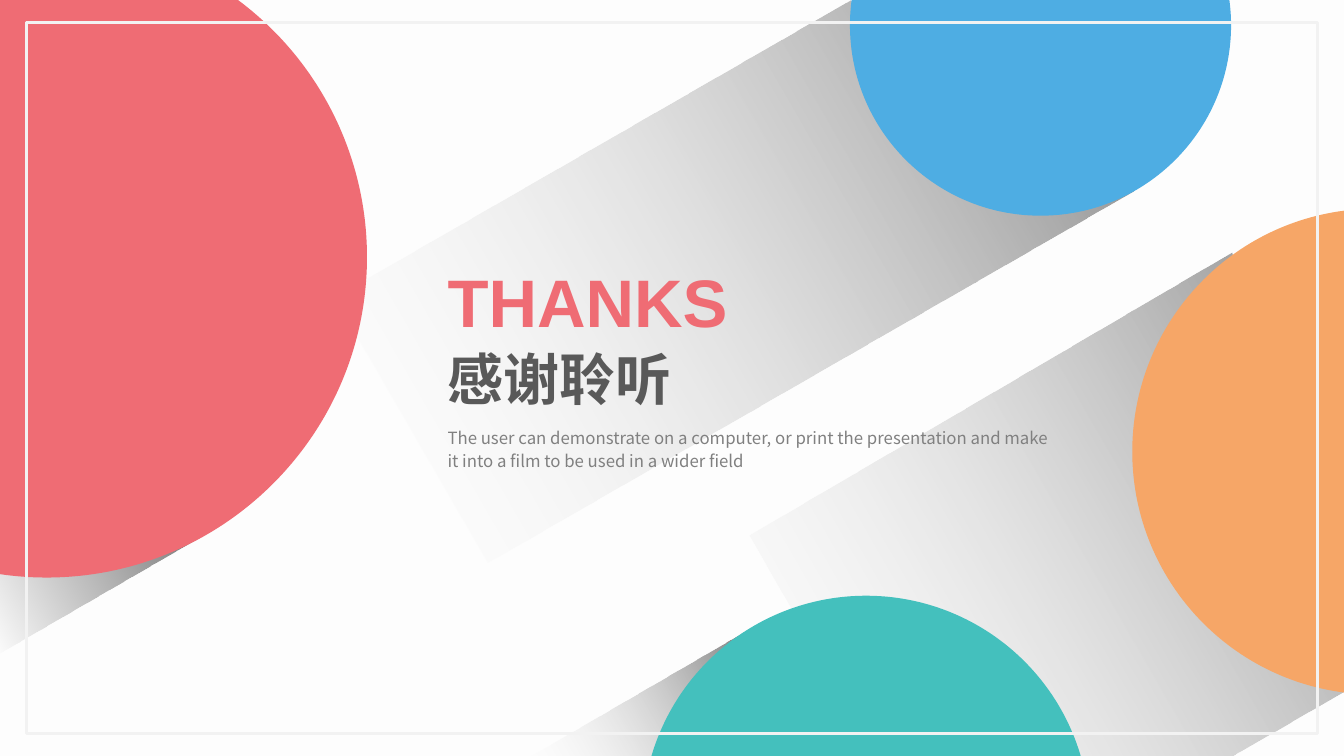
from dataclasses import dataclass
from math import ceil, cos, floor, radians, sin, tan

from lxml.etree import SubElement
from pptx import Presentation
from pptx.dml.color import RGBColor as Rgb
from pptx.enum.shapes import MSO_SHAPE as Kind
from pptx.enum.text import MSO_AUTO_SIZE as Fit
from pptx.oxml.ns import qn
from pptx.util import Emu, Pt

PX = 9144  # one hundredth of an inch
WIDE, HIGH = 1333, 750
TILT = 30


@dataclass(frozen=True)
class Theme:
    page: str = "FDFDFD"
    frame: str = "F2F2F2"
    red: str = "EF6C74"
    teal: str = "44C0BD"
    orange: str = "F6A667"
    blue: str = "4EADE3"
    dark: str = "595959"
    grey: str = "808080"
    black: str = "000000"
    white: str = "FFFFFF"
    head: str = "Arial"
    body: str = "Noto Sans CJK SC"
    big: int = 48
    mid: int = 40
    small: int = 12
    line: float = 2.25


LOOK = Theme()

# corners, opacity of the dark end, colour of the clear end
SHADES = [
    ([(749, 621), (646, 749), (636, 754), (518, 754)], 60, LOOK.white),
    ([(1333, 686), (1222, 251), (743, 531), (957, 903)], 50, LOOK.white),
    ([(1124, 190), (843, 1), (332, 295), (484, 558)], 50, LOOK.white),
    ([(-3, 503), (199, 533), (-4, 650), (-4, 504)], 55, LOOK.black),
]

# centre, radius, first and last angle, extra corners, colour
DISCS = [
    ((46, 255), 318, -53.3, 98.3, [(0, 0)], LOOK.red),
    ((859, 813), 222, 196.5, 343.5, [], LOOK.teal),
    ((1364, 448), 241, 97.4, 262.6, [], LOOK.orange),
    ((1032, 25), 189, -7.6, 187.6, [], LOOK.blue),
]


def px(*sizes):
    return [Emu(round(size * PX)) for size in sizes]


def tint(fill, color):
    fill.solid()
    fill.fore_color.rgb = Rgb.from_string(color)


def turn(spot, angle):
    """Rotate a point clockwise about the page corner."""
    x, y = spot
    c, s = cos(radians(angle)), sin(radians(angle))
    return x * c - y * s, x * s + y * c


def outline(slide, spots):
    spots = [px(*spot) for spot in spots]
    pen = slide.shapes.build_freeform(*spots[0], scale=1.0)
    pen.add_line_segments(spots[1:], close=True)
    shape = pen.convert_to_shape()
    shape.shadow.inherit = False
    shape.line.fill.background()
    return shape


def shade(slide, spots, alpha, clear):
    """Draw a tilted shadow that fades out towards its left end."""
    level = [turn(spot, TILT) for spot in spots]
    shape = outline(slide, level)
    xs, ys = zip(*level)
    x, y = turn(((min(xs) + max(xs)) / 2, (min(ys) + max(ys)) / 2), -TILT)
    left, top = px(x, y)
    shape.left = left - shape.width // 2
    shape.top = top - shape.height // 2
    shape.rotation = 360 - TILT
    fill = shape.fill
    fill.gradient()
    fill.gradient_angle = 180
    ends = [(0, LOOK.black), (1, clear)]
    for stop, (place, color) in zip(fill.gradient_stops, ends):
        stop.position = place
        stop.color.rgb = Rgb.from_string(color)
    grad = shape.element.spPr.find(qn("a:gradFill"))
    for node, part in zip(grad.iter(qn("a:srgbClr")), (alpha, 0)):
        SubElement(node, qn("a:alpha"), val=str(part * 1000))


def arc(centre, radius, first, last):
    """Return the start of an arc, then three curve points per quadrant."""
    def spot(angle, pull=0):
        c, s = cos(radians(angle)), sin(radians(angle))
        return (centre[0] + radius * (c - pull * s),
                centre[1] + radius * (s + pull * c))

    quads = range(floor(first / 90) + 1, ceil(last / 90))
    cuts = [first, *(90 * quad for quad in quads), last]
    spots = [spot(first)]
    for start, end in zip(cuts, cuts[1:]):
        pull = 4 / 3 * tan(radians(end - start) / 4)
        spots += [spot(start, pull), spot(end, -pull), spot(end)]
    return spots


def bend(shape, count):
    """Turn the first lines of an outline, by threes, into curves."""
    track = next(shape.element.iter(qn("a:path")))
    lines = track.findall(qn("a:lnTo"))[:count]
    for at in range(0, count, 3):
        curve = SubElement(track, qn("a:cubicBezTo"))
        lines[at].addprevious(curve)
        for line in lines[at:at + 3]:
            curve.append(line[0])
            track.remove(line)


def disc(slide, centre, radius, first, last, extra, color):
    """Draw the part of a circle that lies on the page."""
    spots = arc(centre, radius, first, last)
    shape = outline(slide, spots + extra)
    bend(shape, len(spots) - 1)
    tint(shape.fill, color)


def label(slide, box, text, wrap, style, color, gap=None):
    frame = slide.shapes.add_textbox(*px(*box)).text_frame
    frame.word_wrap = wrap
    frame.auto_size = Fit.SHAPE_TO_FIT_TEXT
    para = frame.paragraphs[0]
    if gap:
        para.line_spacing = gap
    run = para.add_run()
    run.text = text
    for name, value in style.items():
        setattr(run.font, name, value)
    run.font.color.rgb = Rgb.from_string(color)


def words(slide, box):
    left, top, wide = box
    title = {"name": LOOK.head, "size": Pt(LOOK.big), "bold": True}
    thanks = {**title, "size": Pt(LOOK.mid)}
    note = {"name": LOOK.body, "size": Pt(LOOK.small)}
    label(slide, (left, top + 84, 245, 77), "感谢聆听", False, thanks, LOOK.dark)
    label(slide, (left, top + 164, wide, 56),
          "The user can demonstrate on a computer, or print the presentation "
          "and make it into a film to be used in a wider field",
          True, note, LOOK.grey, 1.14)
    label(slide, (left, top, 301, 91), "THANKS", False, title, LOOK.red)


def border(slide, box):
    shape = slide.shapes.add_shape(Kind.RECTANGLE, *px(*box))
    shape.shadow.inherit = False
    shape.fill.background()
    tint(shape.line.fill, LOOK.frame)
    shape.line.width = Pt(LOOK.line)


def closing(deck):
    slide = deck.slides.add_slide(deck.slide_layouts[6])
    tint(slide.background.fill, LOOK.page)
    for item in SHADES:
        shade(slide, *item)
    for item in DISCS:
        disc(slide, *item)
    words(slide, (434, 253, 619))
    border(slide, (26, 22, WIDE - 52, HIGH - 44))


def main():
    deck = Presentation()
    deck.slide_width, deck.slide_height = px(WIDE, HIGH)
    closing(deck)
    deck.save("out.pptx")


if __name__ == "__main__":
    main()
